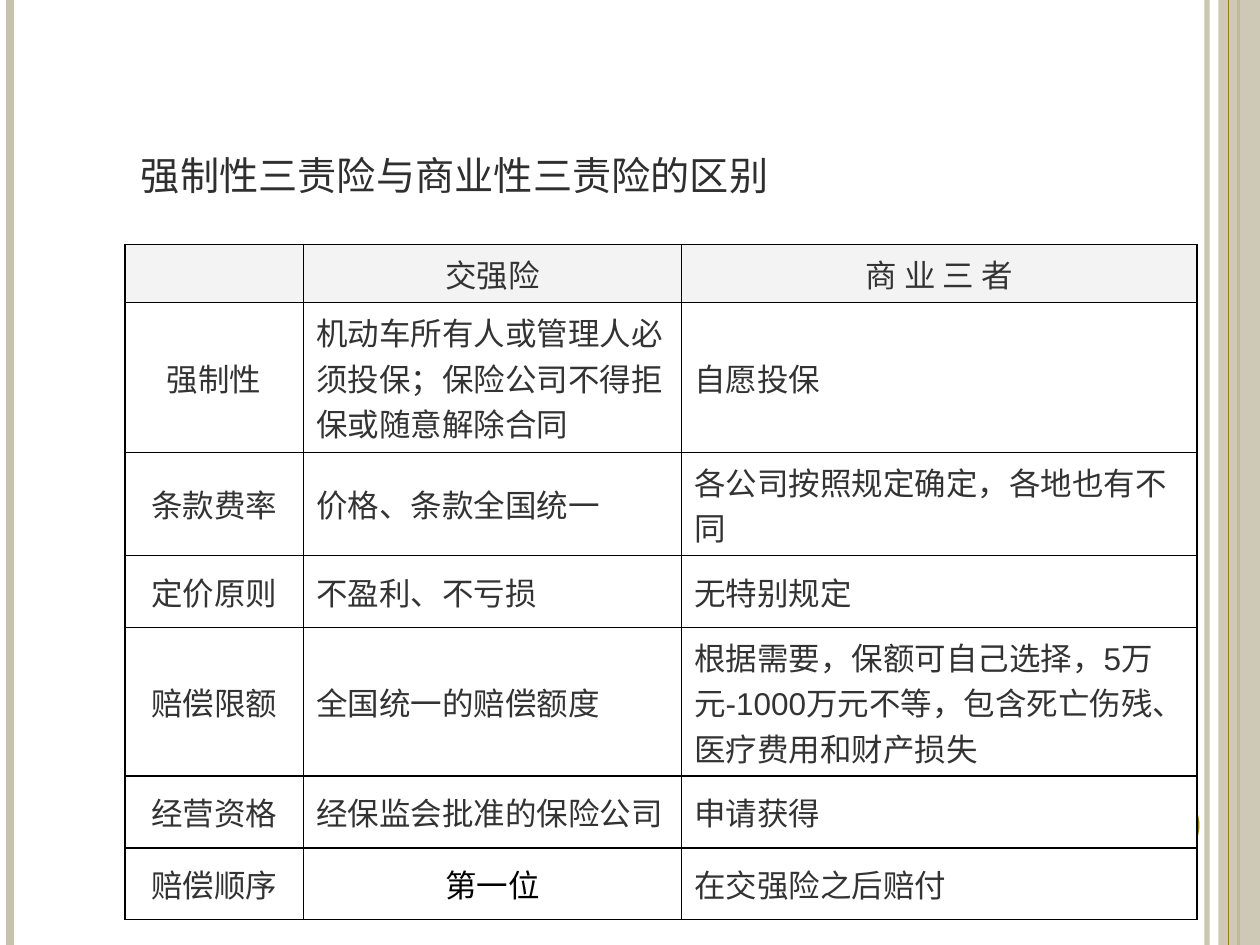
from dataclasses import dataclass

from lxml import etree
from pptx import Presentation
from pptx.dml.color import RGBColor
from pptx.enum.shapes import MSO_CONNECTOR, MSO_SHAPE
from pptx.enum.text import MSO_ANCHOR, PP_ALIGN
from pptx.oxml.ns import qn
from pptx.util import Inches, Pt

STRAIGHT = MSO_CONNECTOR.STRAIGHT
RECTANGLE, OVAL = MSO_SHAPE.RECTANGLE, MSO_SHAPE.OVAL
BOTTOM, MIDDLE = MSO_ANCHOR.BOTTOM, MSO_ANCHOR.MIDDLE
LEFT, CENTER = PP_ALIGN.LEFT, PP_ALIGN.CENTER

SLIDE_WIDTH, SLIDE_HEIGHT = 10, 7.5


@dataclass(frozen=True)
class Theme:
    sand: str = "C7C2AC"
    olive: str = "918415"
    title_color: str = "2F2F2F"
    body_color: str = "333333"
    black: str = "000000"
    header_fill: str = "F3F3F3"
    cell_fill: str = "FFFFFF"
    title_font: str = "TeX Gyre Schola"
    body_font: str = "Arial"
    accent_font: str = "Times New Roman"
    title_size: float = 28
    body_size: float = 18
    border_width: float = 1


TITLE = "强制性三责险与商业性三责险的区别"
COLUMN_WIDTHS = [1.42, 3, 4.09]
ROW_HEIGHTS = [0.46, 1.19, 0.82, 0.57, 1.18, 0.57, 0.57]
COMPARISON = [
    ["", "交强险", "商 业 三 者"],
    ["强制性", "机动车所有人或管理人必须投保；保险公司不得拒保或随意解除合同", "自愿投保"],
    ["条款费率", "价格、条款全国统一", "各公司按照规定确定，各地也有不同"],
    ["定价原则", "不盈利、不亏损", "无特别规定"],
    ["赔偿限额", "全国统一的赔偿额度",
     "根据需要，保额可自己选择，5万元-1000万元不等，包含死亡伤残、医疗费用和财产损失"],
    ["经营资格", "经保监会批准的保险公司", "申请获得"],
    ["赔偿顺序", "第一位", "在交强险之后赔付"],
]
FIRST_IN_ORDER = (6, 1)


def set_opacity(fill_parent, percent):
    color = fill_parent.find(".//" + qn("a:srgbClr"))
    etree.SubElement(color, qn("a:alpha"), val=str(percent * 1000))


class SlideBuilder:
    def __init__(self, slide, theme):
        self.slide = slide
        self.theme = theme

    def vertical_line(self, x, color, width, opacity=100):
        line = self.slide.shapes.add_connector(
            STRAIGHT, Inches(x), Inches(0), Inches(x), Inches(SLIDE_HEIGHT))
        line.line.color.rgb = RGBColor.from_string(color)
        line.line.width = Pt(width)
        properties = line._element.spPr
        if opacity < 100:
            set_opacity(properties, opacity)
        etree.SubElement(properties, qn("a:effectLst"))

    def filled_shape(self, preset, left, top, width, height, color, opacity=100):
        shape = self.slide.shapes.add_shape(
            preset, Inches(left), Inches(top), Inches(width), Inches(height))
        shape.shadow.inherit = False
        shape.fill.solid()
        shape.fill.fore_color.rgb = RGBColor.from_string(color)
        shape.line.fill.background()
        if opacity < 100:
            set_opacity(shape._element.spPr, opacity)

    def format_runs(self, paragraph, font_name, size, color):
        for run in paragraph.runs:
            run.font.name = font_name
            run.font.size = Pt(size)
            run.font.color.rgb = RGBColor.from_string(color)

    def title(self, text, left, top, width, height):
        box = self.slide.shapes.add_textbox(
            Inches(left), Inches(top), Inches(width), Inches(height))
        frame = box.text_frame
        frame.word_wrap = True
        frame.vertical_anchor = BOTTOM
        frame.text = text
        paragraph = frame.paragraphs[0]
        self.format_runs(paragraph, self.theme.title_font,
                         self.theme.title_size, self.theme.title_color)
        for run in paragraph.runs:
            run.font._element.set("cap", "small")

    def cell_borders(self, cell):
        properties = cell._tc.get_or_add_tcPr()
        for index, side in enumerate(("a:lnL", "a:lnR", "a:lnT", "a:lnB")):
            border = etree.Element(qn(side), w=str(Pt(self.theme.border_width)))
            fill = etree.SubElement(border, qn("a:solidFill"))
            etree.SubElement(fill, qn("a:srgbClr"), val=self.theme.black)
            properties.insert(index, border)

    def cell(self, cell, text, fill, alignment, font_name, color):
        cell.fill.solid()
        cell.fill.fore_color.rgb = RGBColor.from_string(fill)
        cell.vertical_anchor = MIDDLE
        cell.text_frame.text = text
        paragraph = cell.text_frame.paragraphs[0]
        paragraph.alignment = alignment
        self.format_runs(paragraph, font_name, self.theme.body_size, color)
        self.cell_borders(cell)

    def comparison_table(self, rows, left, top):
        theme = self.theme
        table = self.slide.shapes.add_table(
            len(rows), len(COLUMN_WIDTHS), Inches(left), Inches(top),
            Inches(sum(COLUMN_WIDTHS)), Inches(sum(ROW_HEIGHTS))).table
        for column, width in zip(table.columns, COLUMN_WIDTHS):
            column.width = Inches(width)
        for row, height in zip(table.rows, ROW_HEIGHTS):
            row.height = Inches(height)
        for r, texts in enumerate(rows):
            for c, text in enumerate(texts):
                accent = (r, c) == FIRST_IN_ORDER
                self.cell(
                    table.cell(r, c), text,
                    fill=theme.header_fill if r == 0 else theme.cell_fill,
                    alignment=CENTER if r == 0 or c == 0 or accent else LEFT,
                    font_name=theme.accent_font if accent else theme.body_font,
                    color=theme.black if accent else theme.body_color)


def main():
    presentation = Presentation()
    presentation.slide_width = Inches(SLIDE_WIDTH)
    presentation.slide_height = Inches(SLIDE_HEIGHT)
    theme = Theme()
    builder = SlideBuilder(
        presentation.slides.add_slide(presentation.slide_layouts[6]), theme)

    builder.vertical_line(9.58, theme.sand, 3, opacity=93)
    builder.vertical_line(0.08, theme.sand, 4.5)
    builder.vertical_line(9.83, theme.olive, 1.5)
    builder.filled_shape(RECTANGLE, 9.67, 0, 0.33, SLIDE_HEIGHT, theme.sand, opacity=87)
    builder.vertical_line(9.75, theme.olive, 0.75)
    builder.filled_shape(OVAL, 8.92, 6.25, 0.6, 0.6, theme.olive)

    builder.title(TITLE, 1.02, 0.09, 7.83, 1.55)
    builder.comparison_table(COMPARISON, 0.99, 1.94)
    presentation.save("out.pptx")


if __name__ == "__main__":
    main()
